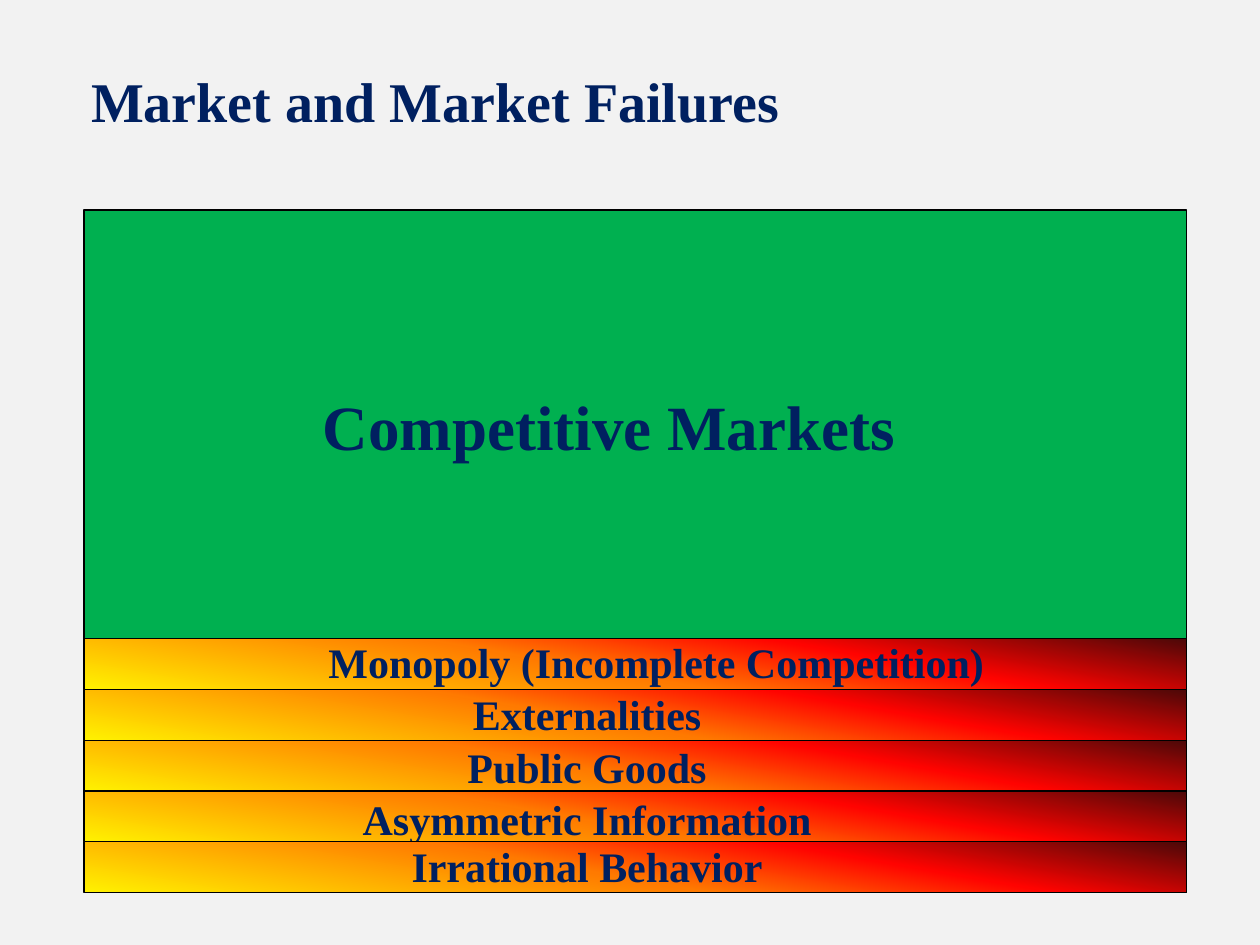
"""Build a slide showing competitive markets resting on five kinds of market failure."""
from dataclasses import dataclass

from lxml import etree
from pptx import Presentation
from pptx.dml.color import RGBColor
from pptx.enum.shapes import MSO_SHAPE
from pptx.enum.text import MSO_ANCHOR, PP_ALIGN
from pptx.oxml.ns import qn
from pptx.shapes.autoshape import Shape
from pptx.slide import Slide
from pptx.util import Pt

RECTANGLE = MSO_SHAPE.RECTANGLE
MIDDLE = MSO_ANCHOR.MIDDLE
TOP = MSO_ANCHOR.TOP
LEFT = PP_ALIGN.LEFT
CENTER = PP_ALIGN.CENTER

BACKGROUND = RGBColor(0xF2, 0xF2, 0xF2)
NAVY = RGBColor(0x00, 0x20, 0x60)
GREEN = RGBColor(0x00, 0xB0, 0x50)
BLACK = RGBColor(0x00, 0x00, 0x00)
YELLOW = RGBColor(0xFF, 0xF2, 0x00)
ORANGE = RGBColor(0xFF, 0x7A, 0x00)
RED = RGBColor(0xFF, 0x03, 0x00)
MAROON = RGBColor(0x4D, 0x08, 0x08)
FIRE_STOPS = ((0, YELLOW), (45, ORANGE), (70, RED), (100, MAROON))
FIRE_ANGLE = 80

FONT = "Times New Roman"
BLOCK_LEFT = 48
BLOCK_WIDTH = 630
MARKET_TOP = 120
FAILURES_TOP = 365
FAILURE_HEIGHT = 29


@dataclass(frozen=True)
class Label:
    text: str
    top: float
    left: float = 96
    width: float = 479
    height: float = 36
    size: float = 24
    alignment: PP_ALIGN = CENTER
    anchor: MSO_ANCHOR = TOP


TITLE = Label("Market and Market Failures", 24, 45, 644, 66, 32, LEFT, MIDDLE)
MARKET = Label("Competitive Markets", 218, 108.5, 479, 51, 36)
FAILURES = (
    Label("Monopoly (Incomplete Competition)", 360, 72, 606),
    Label("Externalities", 390),
    Label("Public Goods", 420),
    Label("Asymmetric Information", 450),
    Label("Irrational Behavior", 476.5),
)


def add_label(slide: Slide, label: Label) -> None:
    """Add a bold navy text box."""
    box = slide.shapes.add_textbox(
        Pt(label.left), Pt(label.top), Pt(label.width), Pt(label.height)
    )
    text_frame = box.text_frame
    text_frame.word_wrap = True
    text_frame.vertical_anchor = label.anchor
    text_frame.text = label.text
    paragraph = text_frame.paragraphs[0]
    paragraph.alignment = label.alignment
    font = paragraph.runs[0].font
    font.name = FONT
    font.size = Pt(label.size)
    font.bold = True
    font.color.rgb = NAVY


def add_block(slide: Slide, top: float, height: float) -> Shape:
    """Add a full-width rectangle with a thin black outline."""
    block = slide.shapes.add_shape(
        RECTANGLE, Pt(BLOCK_LEFT), Pt(top), Pt(BLOCK_WIDTH), Pt(height)
    )
    block.shadow.inherit = False
    block.line.color.rgb = BLACK
    block.line.width = Pt(0.75)
    return block


def fill_with_fire(block: Shape) -> None:
    """Fill a block with the yellow-to-maroon gradient."""
    block.fill.gradient()
    block.fill.gradient_angle = FIRE_ANGLE
    stop_list = next(block.element.iter(qn("a:gsLst")))
    for stop in list(stop_list):
        stop_list.remove(stop)
    for percent, color in FIRE_STOPS:
        stop = etree.SubElement(stop_list, qn("a:gs"), pos=str(percent * 1000))
        etree.SubElement(stop, qn("a:srgbClr"), val=str(color))


def main() -> None:
    """Build and save the presentation."""
    presentation = Presentation()
    presentation.slide_width = Pt(720)
    presentation.slide_height = Pt(540)
    slide = presentation.slides.add_slide(presentation.slide_layouts[6])
    slide.background.fill.solid()
    slide.background.fill.fore_color.rgb = BACKGROUND

    add_label(slide, TITLE)
    for index, failure in enumerate(FAILURES):
        top = FAILURES_TOP + index * FAILURE_HEIGHT
        fill_with_fire(add_block(slide, top, FAILURE_HEIGHT))
        add_label(slide, failure)

    market = add_block(slide, MARKET_TOP, FAILURES_TOP - MARKET_TOP)
    market.fill.solid()
    market.fill.fore_color.rgb = GREEN
    add_label(slide, MARKET)

    presentation.save("out.pptx")


if __name__ == "__main__":
    main()
